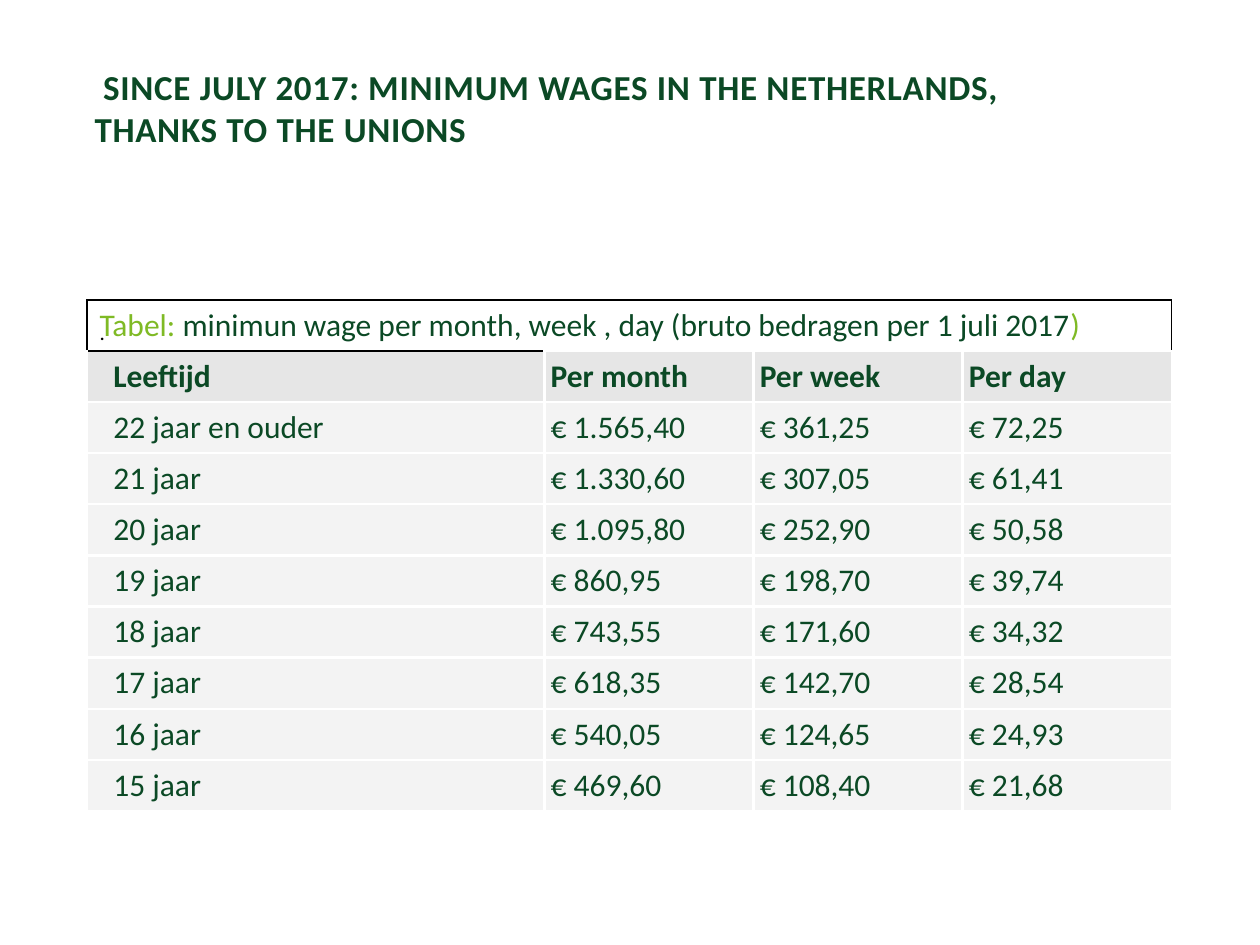
from lxml.etree import SubElement as add_element
from pptx import Presentation
from pptx.dml.color import RGBColor
from pptx.enum.text import MSO_ANCHOR as Anchor, MSO_AUTO_SIZE as AutoSize, PP_ALIGN as Align
from pptx.oxml.ns import qn
from pptx.util import Pt

DARK_GREEN = RGBColor(0x0B, 0x49, 0x25)
LIGHT_GREEN = RGBColor(0x7F, 0xBA, 0x25)
BLUE = RGBColor(0x00, 0x9F, 0xDA)
BLACK = RGBColor(0, 0, 0)
WHITE = RGBColor(0xFF, 0xFF, 0xFF)
HEADER_GREY = RGBColor(0xE6, 0xE6, 0xE6)
BODY_GREY = RGBColor(0xF3, 0xF3, 0xF3)

TITLE = [
    (" ", BLUE),
    ("SINCE JULY 2017: MINIMUM WAGES IN THE NETHERLANDS, THANKS TO THE UNIONS", DARK_GREEN),
]
CAPTION = [
    ("Tabel: ", LIGHT_GREEN),
    ("minimun wage per month, week , day (bruto bedragen per 1 juli 2017", DARK_GREEN),
    (")", LIGHT_GREEN),
]
WAGES = [
    ("Leeftijd", "Per month", "Per week", "Per day"),
    ("22 jaar en ouder", "€ 1.565,40", "€ 361,25", "€ 72,25"),
    ("21 jaar", "€ 1.330,60", "€ 307,05", "€ 61,41"),
    ("20 jaar", "€ 1.095,80", "€ 252,90", "€ 50,58"),
    ("19 jaar", "€ 860,95", "€ 198,70", "€ 39,74"),
    ("18 jaar", "€ 743,55", "€ 171,60", "€ 34,32"),
    ("17 jaar", "€ 618,35", "€ 142,70", "€ 28,54"),
    ("16 jaar", "€ 540,05", "€ 124,65", "€ 24,93"),
    ("15 jaar", "€ 469,60", "€ 108,40", "€ 21,68"),
]
COLUMN_WIDTHS = [261.4, 119.5, 119.5, 119.5]
ROW_HEIGHT = 29.2


def set_all(target, values):
    for name, value in values.items():
        setattr(target, name, value)


def add_spans(para, parts, size, bold=False, font="Calibri"):
    for text, color in parts:
        span = para.add_run()
        span.text = text
        set_all(span.font, {"name": font, "size": Pt(size), "bold": bold})
        span.font.color.rgb = color


def set_borders(cell, colors, width):
    properties = cell._tc.get_or_add_tcPr()
    for side in "LRTB":
        if side in colors:
            line = add_element(properties, qn(f"a:ln{side}"), w=str(Pt(width)))
            fill = add_element(line, qn("a:solidFill"))
            add_element(fill, qn("a:srgbClr"), val=str(colors[side]))


def format_title(title):
    set_all(title, {"left": Pt(54), "top": Pt(37.4), "width": Pt(544.3), "height": Pt(62.6)})
    frame = title.text_frame
    set_all(frame, {
        "margin_left": 0, "margin_top": 0, "margin_right": 0, "margin_bottom": 0,
        "word_wrap": True, "auto_size": AutoSize.NONE, "vertical_anchor": Anchor.TOP,
    })
    para = frame.paragraphs[0]
    set_all(para, {"alignment": Align.LEFT, "line_spacing": 1.0})
    add_spans(para, TITLE, 20, bold=True)
    for span in para.runs:
        span.font._element.set("spc", "40")


def fill_caption(table):
    cells = list(table.rows[0].cells)
    cells[0].merge(cells[-1])
    set_borders(cells[0], dict.fromkeys("LRTB", BLACK), 1)
    for cell in cells[1:]:
        set_borders(cell, dict.fromkeys("RT", BLACK), 1)
    cells[0].fill.background()
    add_spans(cells[0].text_frame.paragraphs[0], CAPTION, 18)


def fill_wage_cell(cell, text, is_header, is_first):
    set_all(cell, {
        "margin_left": Pt(15.1 if is_first else 3.6), "margin_right": Pt(3.6),
        "margin_top": Pt(3.6), "margin_bottom": Pt(3.6),
    })
    borders = dict.fromkeys("LRTB", WHITE)
    if is_header and is_first:
        borders["T"] = BLACK
    set_borders(cell, borders, 1.5)
    cell.fill.solid()
    cell.fill.fore_color.rgb = HEADER_GREY if is_header else BODY_GREY
    add_spans(cell.text_frame.paragraphs[0], [(text, DARK_GREEN)], 18, bold=is_header)


def add_wage_table(page):
    row_count = len(WAGES) + 1
    table = page.shapes.add_table(
        row_count, len(COLUMN_WIDTHS), Pt(49.7), Pt(171.4),
        Pt(sum(COLUMN_WIDTHS)), Pt(ROW_HEIGHT * row_count),
    ).table
    set_all(table, {"first_row": False, "horz_banding": False})
    for column, width in zip(table.columns, COLUMN_WIDTHS):
        column.width = Pt(width)
    for row in table.rows:
        row.height = Pt(ROW_HEIGHT)
    fill_caption(table)
    for row_index, values in enumerate(WAGES):
        for column_index, text in enumerate(values):
            cell = table.cell(row_index + 1, column_index)
            fill_wage_cell(cell, text, row_index == 0, column_index == 0)


def add_dot(page):
    box = page.shapes.add_textbox(Pt(49.7), Pt(177.8), Pt(21.6), Pt(23))
    set_all(box.text_frame, {
        "word_wrap": False, "auto_size": AutoSize.SHAPE_TO_FIT_TEXT,
        "vertical_anchor": Anchor.MIDDLE,
    })
    add_spans(box.text_frame.paragraphs[0], [(". ", BLACK)], 13, font="Roboto")


def main():
    deck = Presentation()
    set_all(deck, {"slide_width": Pt(720), "slide_height": Pt(540)})
    page = deck.slides.add_slide(deck.slide_layouts[5])
    format_title(page.shapes.title)
    add_wage_table(page)
    add_dot(page)
    deck.save("out.pptx")


if __name__ == "__main__":
    main()
